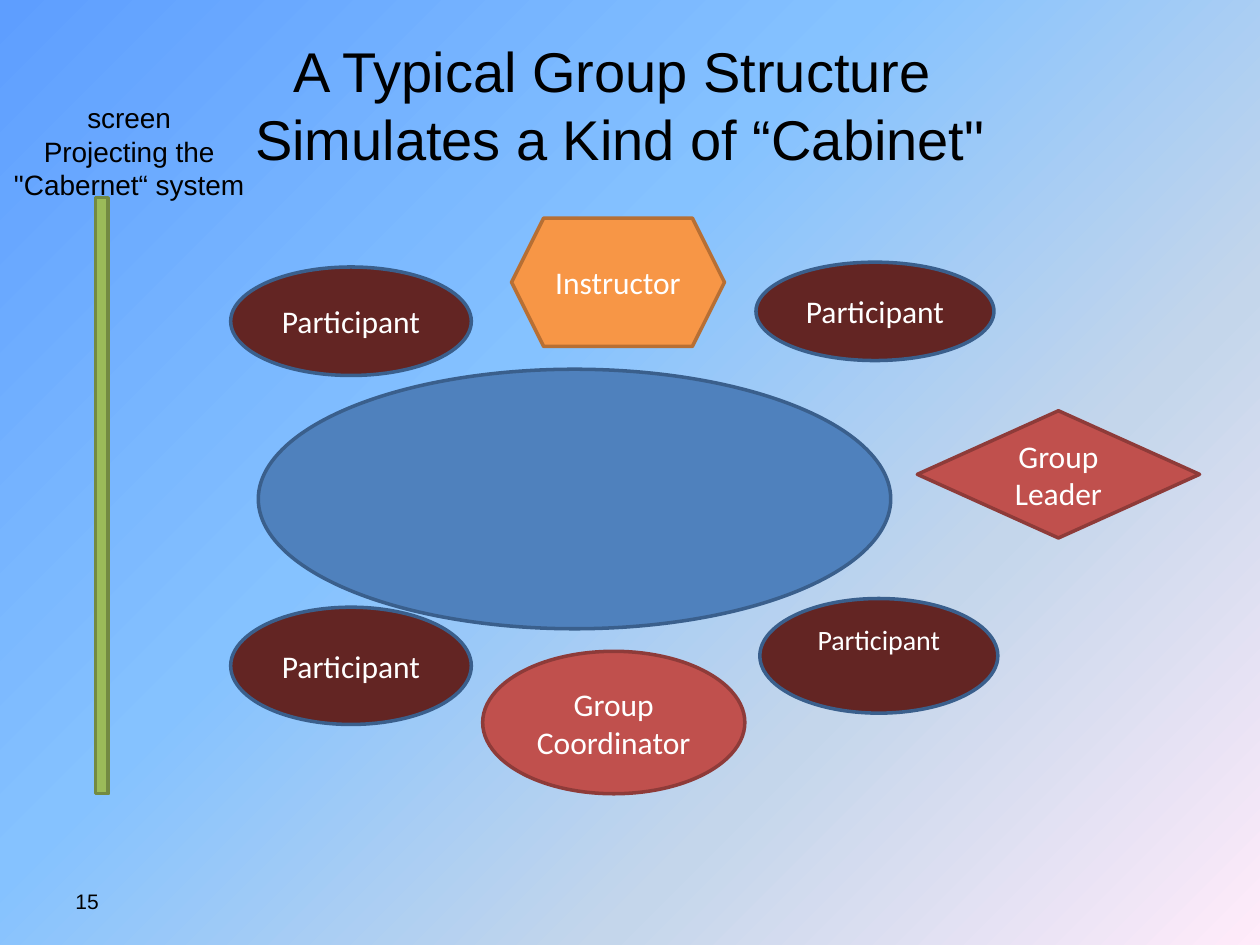
from lxml.etree import SubElement
from pptx import Presentation
from pptx.dml.color import RGBColor
from pptx.enum.shapes import MSO_SHAPE as Shape
from pptx.enum.text import MSO_ANCHOR as Anchor, MSO_AUTO_SIZE as AutoSize, PP_ALIGN as Align
from pptx.oxml.ns import qn
from pptx.util import Pt

BLACK = RGBColor(0x00, 0x00, 0x00)
WHITE = RGBColor(0xFF, 0xFF, 0xFF)
BLUE = RGBColor(0x4F, 0x81, 0xBD)
DARK_BLUE = RGBColor(0x3A, 0x5F, 0x8C)
RED = RGBColor(0xC0, 0x50, 0x4D)
DARK_RED = RGBColor(0x8E, 0x3B, 0x39)
GREEN = RGBColor(0x9B, 0xBB, 0x59)
DARK_GREEN = RGBColor(0x73, 0x8A, 0x42)
ORANGE = RGBColor(0xF7, 0x96, 0x46)
DARK_ORANGE = RGBColor(0xB7, 0x6F, 0x34)
MAROON = RGBColor(0x63, 0x25, 0x23)

# Background stops: percent along the diagonal, colour
SKY_STOPS = [
    (0, RGBColor(0x5E, 0x9E, 0xFF)),
    (40, RGBColor(0x85, 0xC2, 0xFF)),
    (70, RGBColor(0xC4, 0xD6, 0xEB)),
    (100, RGBColor(0xFF, 0xEB, 0xFA)),
]

# Participant seats: left, top, width, height, text size, space below the text
PARTICIPANTS = [
    (432, 149.8, 136, 56.2, 18, 3.6),
    (434.2, 342, 136, 65.5, 16, 22),
    (131.8, 347, 137.5, 67, 18, 3.6),
    (131.8, 152.6, 137.5, 62, 18, 3.6),
]


def paint_background(slide):
    fill = slide.background.fill
    fill.gradient()
    fill.gradient_angle = 315
    stops = slide.element.find(".//" + qn("a:gsLst"))
    for stop in list(stops):
        stops.remove(stop)
    for percent, color in SKY_STOPS:
        stop = SubElement(stops, qn("a:gs"), pos=str(percent * 1000))
        SubElement(stop, qn("a:srgbClr"), val=str(color))


def write_text(shape, text, size, font, color, align=Align.CENTER, anchor=Anchor.MIDDLE):
    frame = shape.text_frame
    frame.text = text
    frame.vertical_anchor = anchor
    for para in frame.paragraphs:
        para.alignment = align
        for span in para.runs:
            span.font.size = Pt(size)
            span.font.name = font
            span.font.color.rgb = color


def place_title(slide, text, left, top, width, height):
    title = slide.shapes.title
    title.left, title.top, title.width, title.height = map(Pt, (left, top, width, height))
    title.text_frame.auto_size = AutoSize.NONE
    write_text(title, text, 32, "Arial", BLACK)


def add_label(slide, text, bounds, size, align, anchor, wrap=True):
    box = slide.shapes.add_textbox(*map(Pt, bounds))
    box.text_frame.word_wrap = wrap
    write_text(box, text, size, "Arial", BLACK, align, anchor)


def add_figure(slide, kind, bounds, fill, outline, text="", size=18):
    figure = slide.shapes.add_shape(kind, *map(Pt, bounds))
    figure.shadow.inherit = False
    figure.fill.solid()
    figure.fill.fore_color.rgb = fill
    figure.line.color.rgb = outline
    figure.line.width = Pt(2)
    if text:
        write_text(figure, text, size, "Calibri", WHITE)
    return figure


def main():
    deck = Presentation()
    deck.slide_width, deck.slide_height = Pt(720), Pt(540)
    slide = deck.slides.add_slide(deck.slide_layouts[5])
    paint_background(slide)

    # Title and page number
    place_title(slide, "A Typical Group Structure \vSimulates a Kind of “Cabinet\"",
                30, 18, 649, 83)
    add_label(slide, "15", (36, 500.4, 168, 28.8), 12, Align.LEFT, Anchor.MIDDLE)

    # Conference table and group leader
    add_figure(slide, Shape.OVAL, (147.6, 211, 361.4, 148.3), BLUE, DARK_BLUE)
    add_figure(slide, Shape.DIAMOND, (524.2, 234.7, 161.3, 72.7), RED, DARK_RED,
               "Group\nLeader")

    # Projection screen and its caption
    add_figure(slide, Shape.RECTANGLE, (54.7, 113, 7.2, 340.6), GREEN, DARK_GREEN)
    add_label(slide, "screen\nProjecting the\n\"Cabernet“ system",
              (0, 54, 147.6, 65.5), 16, Align.CENTER, Anchor.TOP, wrap=False)

    # Coordinator and instructor
    add_figure(slide, Shape.OVAL, (275.8, 372.2, 149.8, 81.4), RED, DARK_RED,
               "Group\nCoordinator")
    add_figure(slide, Shape.HEXAGON, (292.3, 124.6, 121.7, 73.4), ORANGE, DARK_ORANGE,
               "Instructor")

    # Participants around the table
    for *bounds, size, space_below in PARTICIPANTS:
        seat = add_figure(slide, Shape.OVAL, bounds, MAROON, DARK_BLUE, "Participant", size)
        seat.text_frame.margin_bottom = Pt(space_below)

    deck.save("out.pptx")


if __name__ == "__main__":
    main()
